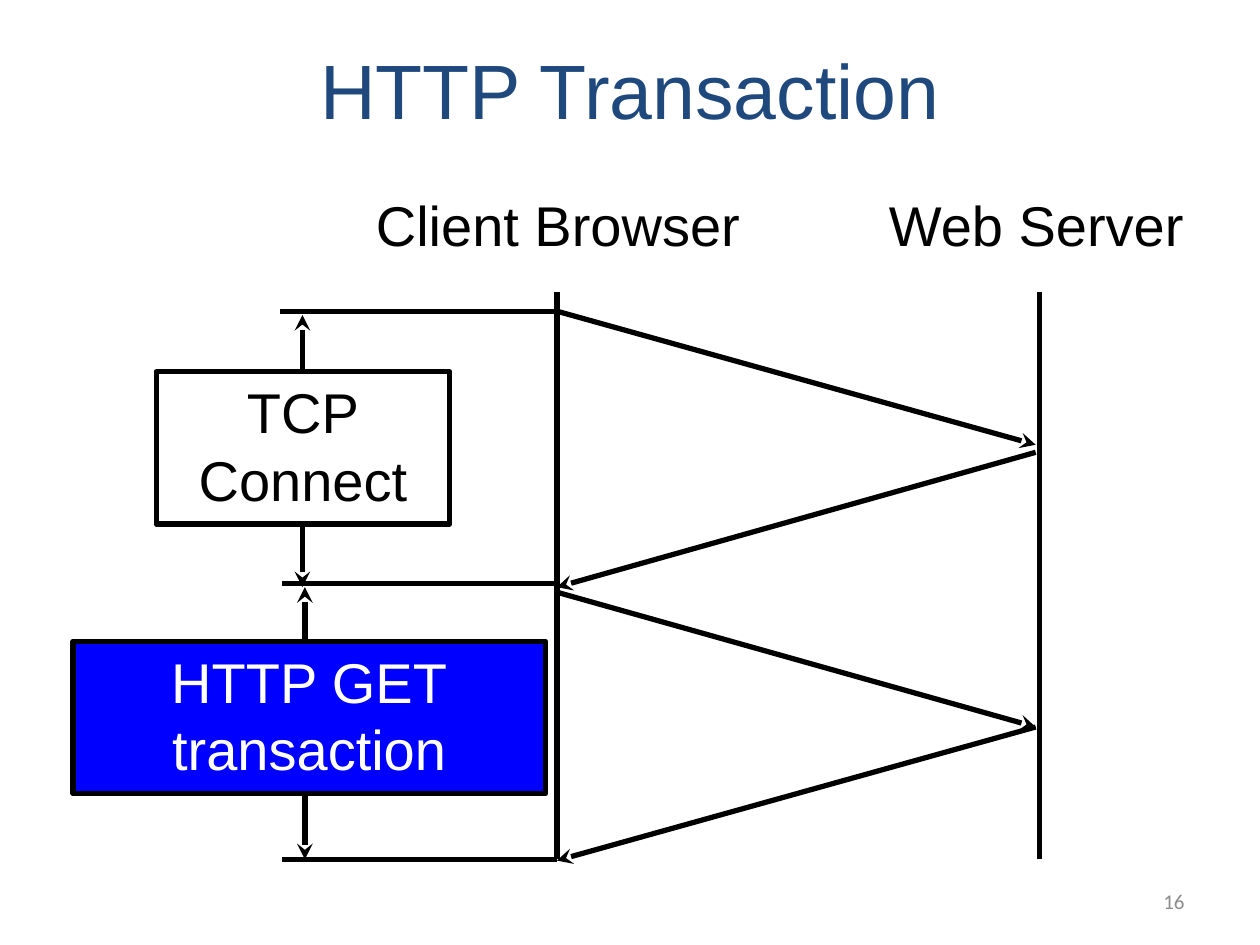
from pptx import Presentation
from pptx import util as u
from pptx.dml.color import RGBColor
from pptx.enum import shapes, text
from pptx.oxml.ns import qn
from lxml import etree

BLACK = RGBColor(0x00, 0x00, 0x00)
WHITE = RGBColor(0xFF, 0xFF, 0xFF)
NAVY = RGBColor(0x1F, 0x49, 0x7D)
BLUE = RGBColor(0x00, 0x00, 0xFF)
GRAY = RGBColor(0x8C, 0x8C, 0x8C)

# Time axes of the two parties, in inches
CLIENT, SERVER = 4.42, 8.25
SERVER_EDGE = 8.22
AXIS_TOP, AXIS_BOTTOM = 2.32, 6.82


def write(box, content, size, color, font="Arial",
          align=text.PP_ALIGN.CENTER, anchor=text.MSO_ANCHOR.TOP):
    frame = box.text_frame
    frame.text = content
    frame.word_wrap = True
    frame.auto_size = text.MSO_AUTO_SIZE.NONE
    frame.vertical_anchor = anchor
    for para in frame.paragraphs:
        para.alignment = align
        for span in para.runs:
            span.font.size = u.Pt(size)
            span.font.name = font
            span.font.color.rgb = color


def add_label(page, area, content, size=32, color=BLACK, **style):
    box = page.shapes.add_textbox(*map(u.Inches, area))
    write(box, content, size, color, **style)


def add_phase(page, area, content, fill, color):
    box = page.shapes.add_shape(shapes.MSO_SHAPE.RECTANGLE,
                                *map(u.Inches, area))
    box.shadow.inherit = False
    box.fill.solid()
    box.fill.fore_color.rgb = fill
    box.line.color.rgb = BLACK
    box.line.width = u.Pt(3)
    write(box, content, 32, color)


def add_line(page, start, end, arrows=()):
    """Draw a line; arrows names the ends ("head", "tail") with a tip."""
    line = page.shapes.add_connector(shapes.MSO_CONNECTOR.STRAIGHT,
                                     *map(u.Inches, (*start, *end)))
    line.line.color.rgb = BLACK
    line.line.width = u.Pt(3)
    outline = line.line._get_or_add_ln()
    for tip in arrows:
        etree.SubElement(outline, qn(f"a:{tip}End"), type="stealth")
    etree.SubElement(line._element.spPr, qn("a:effectLst"))


def add_title(page, content):
    title = page.shapes.title
    title.left, title.top, title.width, title.height = map(
        u.Inches, (0.75, 0.08, 8.5, 1.25))
    write(title, content, 44, NAVY, anchor=text.MSO_ANCHOR.MIDDLE)


def main():
    deck = Presentation()
    deck.slide_width, deck.slide_height = u.Inches(10), u.Inches(7.5)
    page = deck.slides.add_slide(deck.slide_layouts[5])
    add_title(page, "HTTP Transaction")

    # Parties and their time axes
    add_label(page, (2.61, 1.46, 3.64, 0.63), "Client Browser")
    add_label(page, (6.67, 1.46, 3.11, 0.63), "Web Server")
    for x in (CLIENT, SERVER):
        add_line(page, (x, AXIS_TOP), (x, AXIS_BOTTOM))

    # Request and reply of each round trip
    for sent, arrived, answered, returned in ((2.47, 3.53, 3.59, 4.66),
                                              (4.7, 5.77, 5.77, 6.83)):
        add_line(page, (CLIENT, sent), (SERVER_EDGE, arrived), ["tail"])
        add_line(page, (SERVER_EDGE, answered), (CLIENT, returned), ["tail"])

    # Limits and spans of the phases
    for left, y in ((2.22, 2.47), (2.24, 4.63), (2.24, AXIS_BOTTOM)):
        add_line(page, (CLIENT, y), (left, y))
    for x, top, bottom in ((2.4, 2.5, 4.66), (2.42, 4.66, AXIS_BOTTOM)):
        add_line(page, (x, top), (x, bottom), ["head", "tail"])

    # Phase boxes
    add_phase(page, (1.24, 2.95, 2.33, 1.21), "TCP\nConnect", WHITE, BLACK)
    add_phase(page, (0.58, 5.09, 3.75, 1.21), "HTTP GET\ntransaction",
              BLUE, WHITE)

    # Page number
    add_label(page, (7.17, 6.95, 2.33, 0.4), "16", 12, GRAY, font="Calibri",
              align=text.PP_ALIGN.RIGHT, anchor=text.MSO_ANCHOR.MIDDLE)

    deck.save("out.pptx")


if __name__ == "__main__":
    main()
